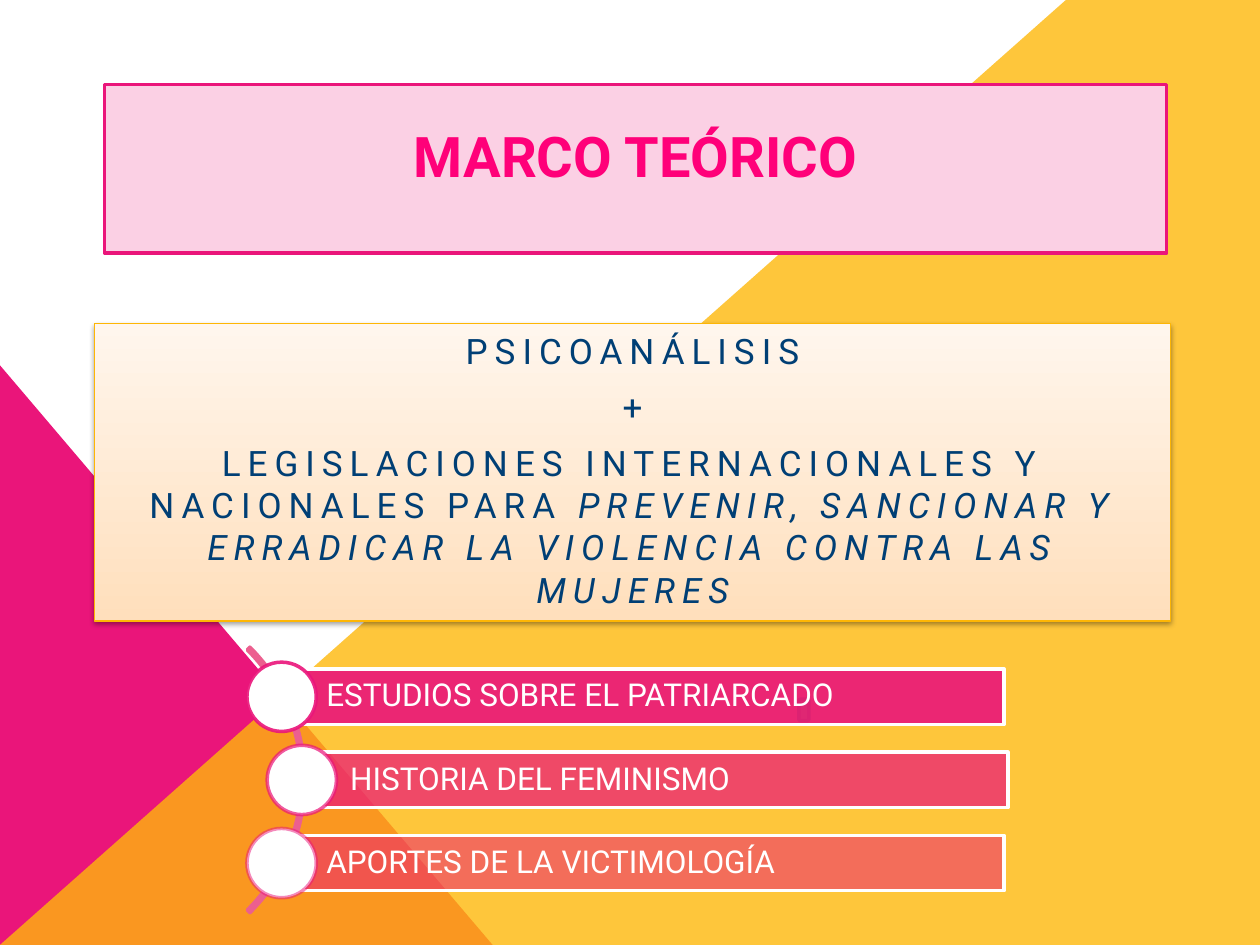
from dataclasses import dataclass

from lxml import etree
from pptx import Presentation
from pptx.dml.color import RGBColor
from pptx.enum.shapes import MSO_SHAPE
from pptx.enum.text import MSO_ANCHOR, PP_ALIGN
from pptx.oxml.ns import qn
from pptx.util import Inches, Pt

RECTANGLE, OVAL = MSO_SHAPE.RECTANGLE, MSO_SHAPE.OVAL
ROUNDED, TRIANGLE = MSO_SHAPE.ROUNDED_RECTANGLE, MSO_SHAPE.RIGHT_TRIANGLE
BLOCK_ARC = MSO_SHAPE.BLOCK_ARC
LEFT, CENTER = PP_ALIGN.LEFT, PP_ALIGN.CENTER
MIDDLE, BOTTOM = MSO_ANCHOR.MIDDLE, MSO_ANCHOR.BOTTOM

WIDTH, HEIGHT = Inches(10), Inches(7.5)
COLUMNS, ROWS = 100, 75


@dataclass(frozen=True)
class Theme:
    font: str = "Roboto"
    title_size: int = 32
    theory_size: int = 20
    topic_size: int = 18
    pink: str = "EA157A"
    pale_pink: str = "FBD0E4"
    title: str = "FF0079"
    arc: str = "EC5F8F"
    yellow: str = "FEB80A"
    theory_line: str = "FEB604"
    theory_bottom: str = "FFDFBC"
    theory_top: str = "FFF6ED"
    navy: str = "003F75"
    green: str = "7FD13B"
    dark_green: str = "5E9B2C"
    white: str = "FFFFFF"
    shadow: str = "000000"


THEME = Theme()

THEORY = [
    [("PSICOANÁLISIS", False)],
    [("+", False)],
    [
        ("LEGISLACIONES INTERNACIONALES Y NACIONALES PARA ", False),
        ("PREVENIR, SANCIONAR Y ERRADICAR LA VIOLENCIA CONTRA LAS MUJERES", True),
    ],
]

TOPICS = [
    ("ESTUDIOS SOBRE EL PATRIARCADO", 22.4, 79.7, 19.6, 90),
    ("HISTORIA DEL FEMINISMO", 24.3, 80, 21.2, 70),
    ("APORTES DE LA VICTIMOLOGÍA", 22.4, 79.7, 19.6, 50),
]


def column(count):
    return round(WIDTH * count / COLUMNS)


def row(count):
    return round(HEIGHT * count / ROWS)


def apply(target, values):
    for name, value in values.items():
        setattr(target, name, value)


def set_opacity(parent, percent):
    color = next(parent.iter(qn("a:srgbClr")))
    etree.SubElement(color, qn("a:alpha"), val=str(percent * 1000))


def paint(shape, fill=None, line=None, line_width=2, fill_opacity=100, line_opacity=100):
    shape.shadow.inherit = False
    properties = shape._element.spPr
    if fill:
        shape.fill.solid()
        shape.fill.fore_color.rgb = RGBColor.from_string(fill)
        if fill_opacity < 100:
            set_opacity(properties.find(qn("a:solidFill")), fill_opacity)
    else:
        shape.fill.background()
    if line:
        shape.line.color.rgb = RGBColor.from_string(line)
        shape.line.width = Pt(line_width)
        if line_opacity < 100:
            set_opacity(properties.find(qn("a:ln")), line_opacity)
    else:
        shape.line.fill.background()


def add_box(slide, kind, left, top, width, height, **style):
    shape = slide.shapes.add_shape(
        kind, column(left), row(top), column(width), row(height)
    )
    paint(shape, **style)
    return shape


def add_polygon(slide, points, **style):
    corners = [(column(x), row(y)) for x, y in points]
    builder = slide.shapes.build_freeform(*corners[0])
    builder.add_line_segments(corners[1:], close=True)
    paint(builder.convert_to_shape(), **style)


def write(shape, paragraphs, frame_format, paragraph_format, font_format, color, spacing=0):
    frame = shape.text_frame
    apply(frame, {"word_wrap": True, **frame_format})
    for index, runs in enumerate(paragraphs):
        paragraph = frame.add_paragraph() if index else frame.paragraphs[0]
        apply(paragraph, paragraph_format)
        for text, italic in runs:
            run = paragraph.add_run()
            run.text = text
            apply(run.font, {"name": THEME.font, "italic": italic, **font_format})
            run.font.color.rgb = RGBColor.from_string(color)
            if spacing:
                run._r.get_or_add_rPr().set("spc", str(spacing * 100))


def add_background(slide):
    add_box(slide, TRIANGLE, 0, 29, 39.1, 46, fill=THEME.pink)
    diagonal = [(0, ROWS), (84.6, 0), (COLUMNS, 0), (COLUMNS, ROWS)]
    add_polygon(slide, diagonal, fill=THEME.yellow, fill_opacity=80)


def add_title(slide):
    title = add_box(
        slide, RECTANGLE, 8.3, 6.7, 84.3, 13.4, fill=THEME.pale_pink, line=THEME.pink
    )
    write(
        title,
        [[("MARCO TEÓRICO", False)]],
        {"vertical_anchor": BOTTOM, "margin_bottom": row(5.1)},
        {"alignment": CENTER},
        {"size": Pt(THEME.title_size), "bold": True},
        THEME.title,
    )


def add_theory(slide):
    panel = add_box(
        slide, RECTANGLE, 7.5, 25.7, 85.4, 23.6, line=THEME.theory_line, line_width=0.75
    )
    panel.fill.gradient()
    panel.fill.gradient_angle = 90
    for stop, color in zip(
        panel.fill.gradient_stops, (THEME.theory_bottom, THEME.theory_top)
    ):
        stop.color.rgb = RGBColor.from_string(color)
    effects = panel._element.spPr.find(qn("a:effectLst"))
    shadow = etree.SubElement(
        effects,
        qn("a:outerShdw"),
        blurRad=str(Pt(3.1)),
        dist=str(Pt(1.6)),
        dir="5400000",
        rotWithShape="0",
    )
    etree.SubElement(shadow, qn("a:srgbClr"), val=THEME.shadow)
    set_opacity(shadow, 38)
    write(
        panel,
        THEORY,
        {"vertical_anchor": MIDDLE, "margin_top": row(0.1), "margin_bottom": row(0.5)},
        {"alignment": CENTER, "space_before": Pt(8)},
        {"size": Pt(THEME.theory_size)},
        THEME.navy,
        spacing=4,
    )


def add_topics(slide):
    add_box(
        slide, ROUNDED, 63.4, 55.5, 0.8, 1.7, fill=THEME.green, line=THEME.dark_green
    )
    arc = add_box(slide, BLOCK_ARC, -5.6, 47, 29.8, 29.8, line=THEME.arc)
    for index, value in enumerate((189, 27, 0.01)):
        arc.adjustments[index] = value
    for index, (text, left, right, circle_left, opacity) in enumerate(TOPICS):
        top = 53.1 + 6.6 * index
        bar = add_box(
            slide, RECTANGLE, left, top, right - left, 4.4,
            fill=THEME.pink, fill_opacity=opacity, line=THEME.white,
        )
        write(
            bar,
            [[(text, False)]],
            {"vertical_anchor": MIDDLE, "margin_left": column(3.5)},
            {"alignment": LEFT, "line_spacing": 0.9},
            {"size": Pt(THEME.topic_size)},
            THEME.white,
        )
        add_box(
            slide, OVAL, circle_left, top - 0.55, 5.5, 5.5,
            fill=THEME.white, line=THEME.pink, line_opacity=opacity,
        )


def main():
    presentation = Presentation()
    apply(presentation, {"slide_width": WIDTH, "slide_height": HEIGHT})
    slide = presentation.slides.add_slide(presentation.slide_layouts[6])
    add_background(slide)
    add_title(slide)
    add_theory(slide)
    add_topics(slide)
    presentation.save("out.pptx")


if __name__ == "__main__":
    main()
